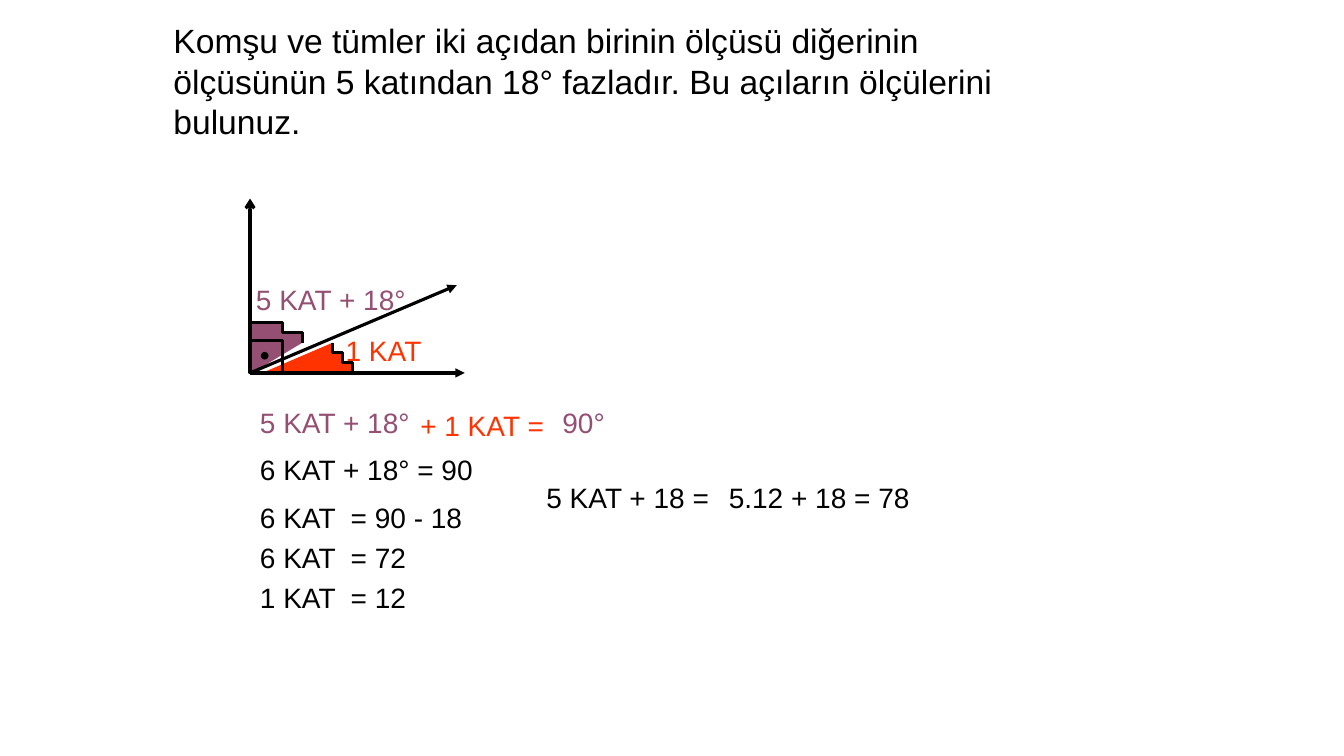
from pptx import Presentation
from pptx.dml.color import RGBColor
from pptx.enum.shapes import MSO_CONNECTOR as Connector, MSO_SHAPE as Preset
from pptx.enum.text import MSO_ANCHOR as Anchor, MSO_AUTO_SIZE as AutoSize, PP_ALIGN as Align
from pptx.oxml.ns import qn
from pptx.util import Inches, Pt
from lxml.etree import SubElement

COLORS = {"ink": "000000", "large": "954F72", "small": "FF3300"}
CELL = 0.1
VERTEX = (24.8, 37)
MARK = 3.2
LINE_HEIGHT = 4.3
EQUALS_TAB = 9


def grid(cells):
    return Inches(cells * CELL)


def color(name):
    return RGBColor.from_string(COLORS[name])


def style_line(line):
    line.color.rgb = color("ink")
    line.width = Pt(2.25)


def style_text(frame, size, tone):
    frame.word_wrap = True
    frame.auto_size = AutoSize.SHAPE_TO_FIT_TEXT
    for para in frame.paragraphs:
        para.alignment = Align.LEFT
        para.space_before = Pt(0)
        for span in para.runs:
            span.font.name = "Arial"
            span.font.size = Pt(size)
            span.font.color.rgb = color(tone)


def add_question(page, text):
    title = page.shapes.title
    title.left, title.top, title.width, title.height = map(grid, (16.2, 1.5, 90.6, 13))
    title.text_frame.text = text
    title.text_frame.vertical_anchor = Anchor.MIDDLE
    style_text(title.text_frame, 24, "ink")


def add_label(page, text, column, row, width, tone="ink"):
    box = page.shapes.add_textbox(*map(grid, (column, row, width, LINE_HEIGHT)))
    frame = box.text_frame
    frame.text = text
    if "\t" in text:
        stops = SubElement(frame.paragraphs[0]._p.get_or_add_pPr(), qn("a:tabLst"))
        SubElement(stops, qn("a:tab"), pos=str(grid(EQUALS_TAB)), algn="l")
    style_text(frame, 20, tone)


def add_ray(page, tip, arrow):
    ray = page.shapes.add_connector(Connector.STRAIGHT, *map(grid, VERTEX + tip))
    style_line(ray.line)
    SubElement(ray.line._get_or_add_ln(), qn("a:tailEnd"), type=arrow)
    SubElement(ray._element.spPr, qn("a:effectLst"))


def bezier(start, first, second, end, steps=16):
    points = []
    for step in range(steps + 1):
        t = step / steps
        weights = ((1 - t) ** 3, 3 * t * (1 - t) ** 2, 3 * t * t * (1 - t), t ** 3)
        points.append(tuple(sum(weight * value for weight, value in zip(weights, axis))
                            for axis in zip(start, first, second, end)))
    return points


def add_outline(page, points, closed):
    builder = page.shapes.build_freeform(*points[0], scale=grid(1))
    builder.add_line_segments(points[1:], close=closed)
    outline = builder.convert_to_shape()
    outline.shadow.inherit = False
    return outline


def add_angle(page, corner, curve, tone):
    arc = bezier(*curve)
    wedge = add_outline(page, arc + [corner], True)
    wedge.fill.solid()
    wedge.fill.fore_color.rgb = color(tone)
    wedge.line.fill.background()
    edge = add_outline(page, arc, False)
    edge.fill.background()
    style_line(edge.line)


def add_right_angle(page):
    column, row = VERTEX
    square = page.shapes.add_shape(Preset.RECTANGLE, *map(grid, (column, row - MARK, MARK, MARK)))
    square.shadow.inherit = False
    square.fill.background()
    style_line(square.line)
    add_label(page, "•", column, row - 4, 7.1)


def main():
    deck = Presentation()
    deck.slide_width, deck.slide_height = Inches(13.33), Inches(7.5)
    page = deck.slides.add_slide(deck.slide_layouts[5])

    add_angle(page, (25.7, 36.7),
              ((32.7, 33.9), (33.5, 34.9), (34.1, 35.8), (34.8, 36.8)), "small")
    add_angle(page, (25, 36.7),
              ((25, 31.9), (27.3, 31.9), (29.4, 32.9), (30.5, 34.4)), "large")
    add_question(page, "Komşu ve tümler iki açıdan birinin ölçüsü diğerinin ölçüsünün "
                       "5 katından 18° fazladır. Bu açıların ölçülerini bulunuz.")
    add_ray(page, (24.8, 19.7), "arrow")
    add_ray(page, (46.1, 37), "triangle")
    add_right_angle(page)
    add_ray(page, (45.3, 28.3), "triangle")

    add_label(page, "1 KAT", 33.3, 32.6, 12.6, "small")
    add_label(page, "5 KAT + 18°", 24.4, 27.5, 17.3, "large")
    add_label(page, "5 KAT + 18°", 24.8, 39.7, 17.3, "large")
    add_label(page, "+ 1 KAT =", 40.7, 40, 17.3, "small")
    add_label(page, "90°", 54.8, 39.7, 6.4, "large")

    steps = (("6 KAT + 18° = 90", 44.4), ("6 KAT\t= 90 - 18", 49.2),
             ("6 KAT\t= 72", 53.1), ("1 KAT\t= 12", 57.1))
    for text, row in steps:
        add_label(page, text, 24.8, row, 24.4)
    add_label(page, "5 KAT + 18 =", 53.2, 47.2, 18.9)
    add_label(page, "5.12 + 18 = 78", 71.3, 47.2, 21.3)

    deck.save("out.pptx")


if __name__ == "__main__":
    main()
